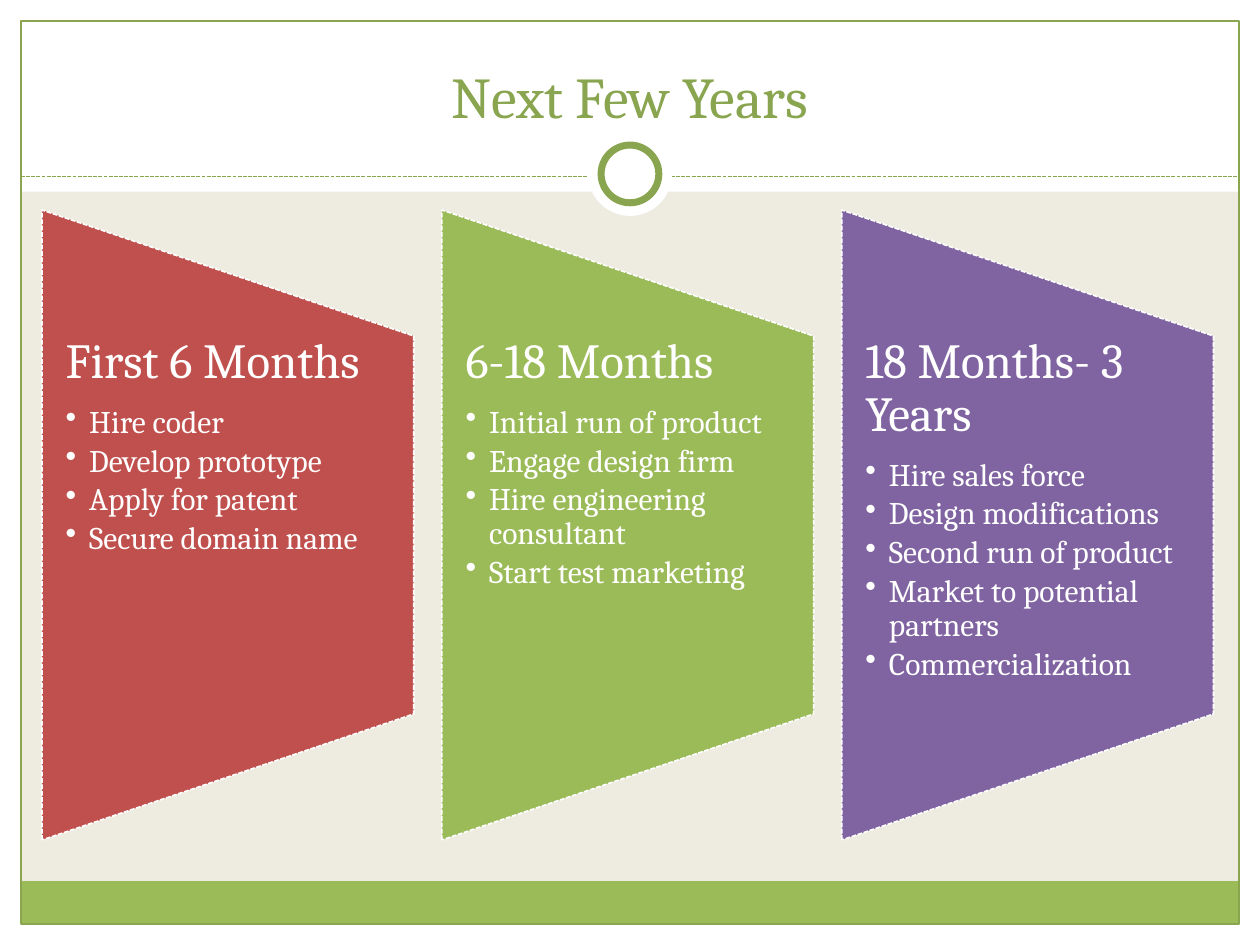
from lxml import etree
from pptx import Presentation
from pptx import util as u
from pptx.dml.color import RGBColor
from pptx.enum import dml, shapes, text
from pptx.oxml import ns

WHITE = RGBColor(0xFF, 0xFF, 0xFF)
CREAM = RGBColor(0xEE, 0xEC, 0xE1)
RED = RGBColor(0xC0, 0x50, 0x4D)
GREEN = RGBColor(0x9B, 0xBB, 0x59)
DARK_GREEN = RGBColor(0x89, 0xA5, 0x4F)
PURPLE = RGBColor(0x80, 0x64, 0xA2)
FONT = "Cambria"

WIDTH, HEIGHT = 720, 540
MARGIN = 12
HEADER_HEIGHT = 109.5
RULE_Y = 100.8
RING_CENTER_Y = 99.4

# Phase panels: columns at an equal pitch around one centre line
COLUMN_LEFT, COLUMN_WIDTH, COLUMN_PITCH = 24, 212.4, 228.5
PANEL_HEIGHT, PANEL_CENTER_Y = 360, 300
TEXT_TOP, TEXT_HEIGHT = 192, 216
INDENT = 13.5

PHASES = [
    ("First 6 Months", RED,
     ["Hire coder", "Develop prototype", "Apply for patent",
      "Secure domain name"]),
    ("6-18 Months", GREEN,
     ["Initial run of product", "Engage design firm",
      "Hire engineering consultant", "Start test marketing"]),
    ("18 Months- 3 Years", PURPLE,
     ["Hire sales force", "Design modifications", "Second run of product",
      "Market to potential partners", "Commercialization"]),
]


def style_line(line, color, width, dashed=False):
    line.color.rgb = color
    line.width = u.Pt(width)
    if dashed:
        line.dash_style = dml.MSO_LINE.SQUARE_DOT


def style_font(font, size, color):
    font.name = FONT
    font.size = u.Pt(size)
    font.color.rgb = color


def add_shape(slide, kind, box, fill=None, line=None):
    shape = slide.shapes.add_shape(kind, *map(u.Pt, box))
    shape.shadow.inherit = False
    if fill is None:
        shape.fill.background()
    else:
        shape.fill.solid()
        shape.fill.fore_color.rgb = fill
    if line is None:
        shape.line.fill.background()
    else:
        style_line(shape.line, *line)
    return shape


def add_circle(slide, diameter, line=None):
    box = (WIDTH / 2 - diameter / 2, RING_CENTER_Y - diameter / 2,
           diameter, diameter)
    add_shape(slide, shapes.MSO_SHAPE.OVAL, box, WHITE, line)


def add_frame(slide):
    rectangle = shapes.MSO_SHAPE.RECTANGLE
    inner_width, inner_height = WIDTH - 2 * MARGIN, HEIGHT - 2 * MARGIN

    # White header and margins
    for box in [(0, HEIGHT - MARGIN, WIDTH, MARGIN),
                (0, 0, WIDTH, HEADER_HEIGHT),
                (0, 0, MARGIN, HEIGHT),
                (WIDTH - MARGIN, 0, MARGIN, HEIGHT)]:
        add_shape(slide, rectangle, box, WHITE)

    # Footer band and border
    add_shape(slide, rectangle, (MARGIN, 503.5, inner_width, 24.5), GREEN)
    add_shape(slide, rectangle, (MARGIN, MARGIN, inner_width, inner_height),
              line=(DARK_GREEN, 0.75))

    # Dashed rule with the ring over its middle
    rule = slide.shapes.add_connector(
        shapes.MSO_CONNECTOR.STRAIGHT, u.Pt(MARGIN), u.Pt(RULE_Y),
        u.Pt(WIDTH - MARGIN), u.Pt(RULE_Y))
    style_line(rule.line, DARK_GREEN, 0.75, dashed=True)
    etree.SubElement(rule.element.spPr, ns.qn("a:effectLst"))
    add_circle(slide, 48)
    add_circle(slide, 33, (DARK_GREEN, 4))


def format_title(slide, wording):
    title = slide.shapes.title
    title.left, title.top = u.Pt(24), u.Pt(18)
    title.width, title.height = u.Pt(672), u.Pt(60)
    frame = title.text_frame
    frame.text = wording
    frame.vertical_anchor = text.MSO_ANCHOR.BOTTOM
    paragraph = frame.paragraphs[0]
    paragraph.alignment = text.PP_ALIGN.CENTER
    style_font(paragraph.font, 33, DARK_GREEN)
    # Bring the title in front of the header
    title.element.getparent().append(title.element)


def add_bullet(paragraph):
    paragraph.level = 1
    properties = paragraph._p.get_or_add_pPr()
    properties.set("marL", str(u.Pt(INDENT)))
    properties.set("indent", str(-u.Pt(INDENT)))
    etree.SubElement(properties, ns.qn("a:buChar"), char="•")


def format_paragraph(paragraph, wording, size, space_after):
    paragraph.text = wording
    paragraph.alignment = text.PP_ALIGN.LEFT
    paragraph.line_spacing = 0.9
    paragraph.space_after = u.Pt(space_after)
    style_font(paragraph.font, size, WHITE)


def add_phase(slide, left, heading, color, tasks):
    # Panel turned on its side, so its width is the visible height
    box = (left + (COLUMN_WIDTH - PANEL_HEIGHT) / 2,
           PANEL_CENTER_Y - COLUMN_WIDTH / 2, PANEL_HEIGHT, COLUMN_WIDTH)
    panel = add_shape(slide, shapes.MSO_SHAPE.FLOWCHART_MANUAL_OPERATION,
                      box, color, (WHITE, 0.9, True))
    panel.rotation = 270

    # Heading and tasks
    textbox = slide.shapes.add_textbox(
        *map(u.Pt, (left, TEXT_TOP, COLUMN_WIDTH, TEXT_HEIGHT)))
    frame = textbox.text_frame
    frame.word_wrap = True
    frame.margin_left = frame.margin_right = u.Pt(INDENT)
    frame.margin_top = frame.margin_bottom = 0
    format_paragraph(frame.paragraphs[0], heading, 28, 9.8)
    for task in tasks:
        paragraph = frame.add_paragraph()
        add_bullet(paragraph)
        format_paragraph(paragraph, task, 18, 2.7)


def main():
    presentation = Presentation()
    presentation.slide_width = u.Pt(WIDTH)
    presentation.slide_height = u.Pt(HEIGHT)
    slide = presentation.slides.add_slide(presentation.slide_layouts[5])
    slide.background.fill.solid()
    slide.background.fill.fore_color.rgb = CREAM

    add_frame(slide)
    format_title(slide, "Next Few Years")
    for index, phase in enumerate(PHASES):
        add_phase(slide, COLUMN_LEFT + index * COLUMN_PITCH, *phase)

    presentation.save("out.pptx")


if __name__ == "__main__":
    main()
